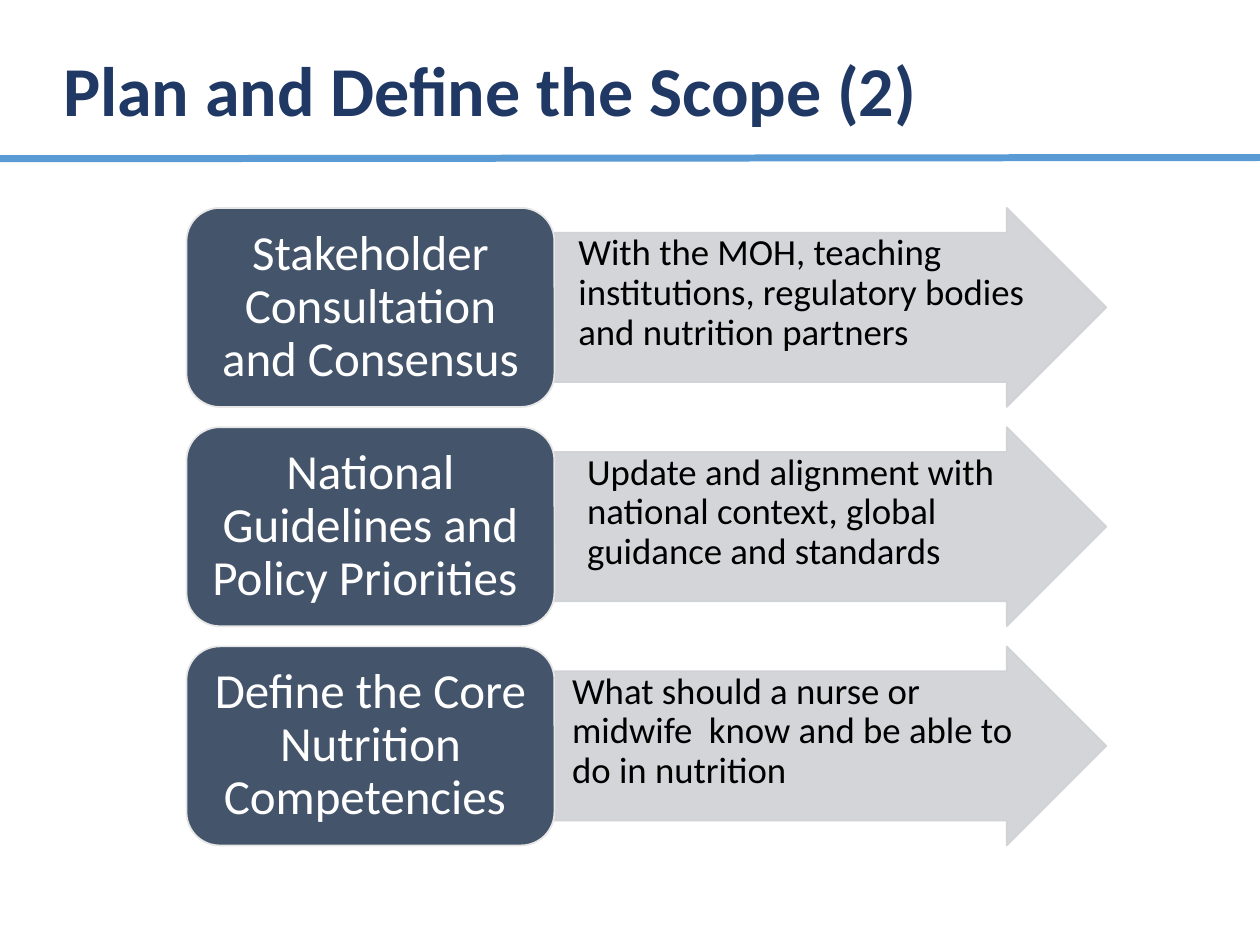
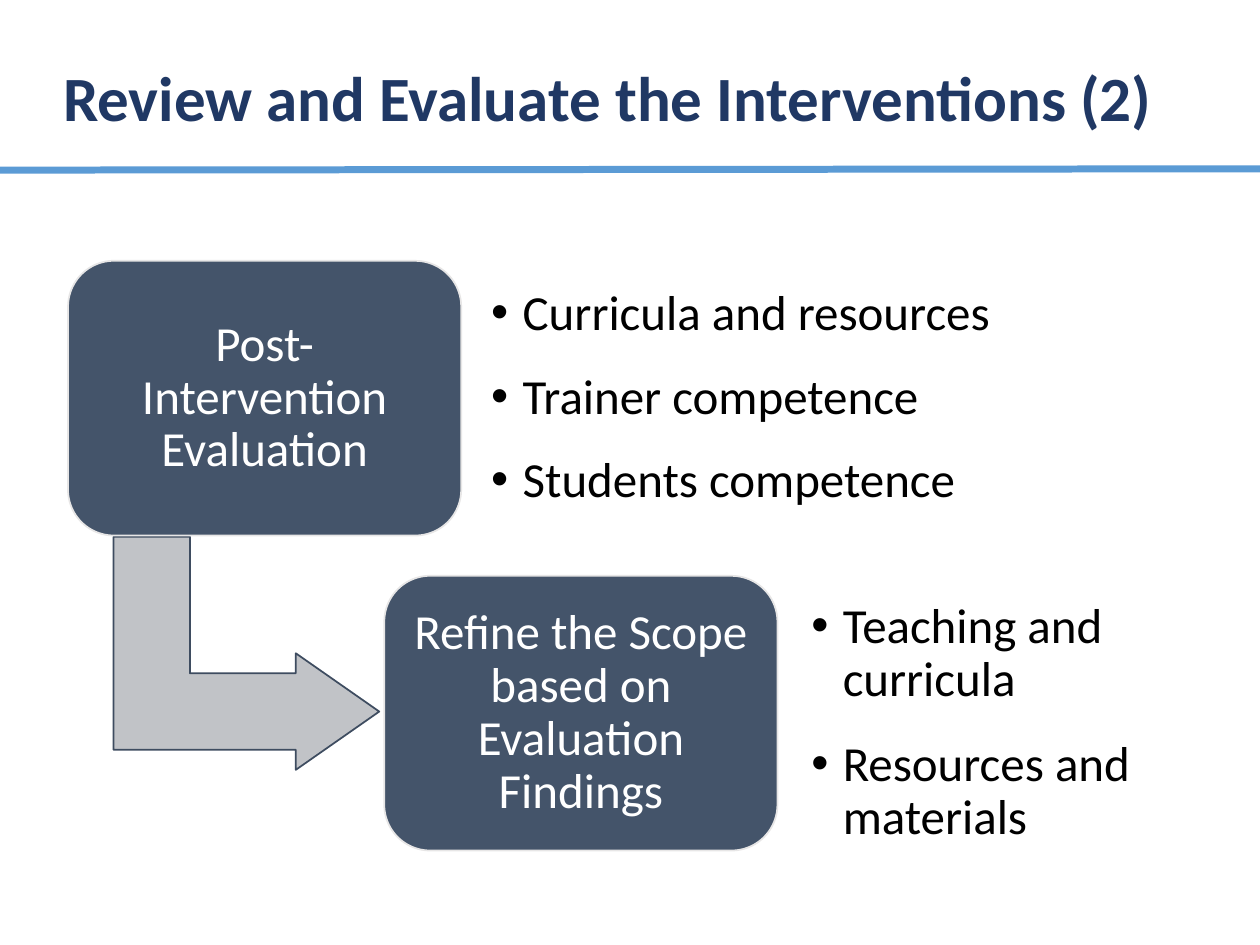
from lxml.etree import SubElement
from pptx import Presentation
from pptx.dml.color import RGBColor
from pptx.enum.shapes import MSO_CONNECTOR, MSO_SHAPE
from pptx.enum.text import MSO_ANCHOR, PP_ALIGN
from pptx.oxml.ns import qn
from pptx.util import Inches, Pt

COLORS = {"title": "203864", "rule": "5B9BD5", "box": "44546A", "box_line": "E7E6E6",
          "arrow": "CFD1D4", "bent": "C1C3C7", "bent_line": "3E4C60",
          "white": "FFFFFF", "black": "000000"}
FONT = "Calibri"


def format_text(tf, size, color, insets, anchor=MSO_ANCHOR.MIDDLE, align=PP_ALIGN.LEFT, bold=False):
    tf.word_wrap = True
    tf.vertical_anchor = anchor
    tf.margin_left, tf.margin_top, tf.margin_right, tf.margin_bottom = map(Inches, insets)
    for p in tf.paragraphs:
        p.alignment = align
        p.line_spacing = 0.9
        for r in p.runs:
            r.font.name = FONT
            r.font.size = Pt(size)
            r.font.bold = bold
            r.font.color.rgb = RGBColor.from_string(COLORS[color])


def add_filled(s, kind, at, fill, line, adjustments):
    sp = s.shapes.add_shape(kind, *map(Inches, at))
    sp.shadow.inherit = False
    for i, value in enumerate(adjustments):
        sp.adjustments[i] = value
    sp.fill.solid()
    sp.fill.fore_color.rgb = RGBColor.from_string(COLORS[fill])
    sp.line.color.rgb = RGBColor.from_string(COLORS[line])
    sp.line.width = Pt(1)
    return sp


prs = Presentation()
prs.slide_width, prs.slide_height = Inches(10), Inches(7.5)

# Titles and the rule below them
slides = []
for title, size, height, rule_y in [
    ("Plan and Define the Scope (2)", 40, 1.49, 1.26),
    ("Review and Evaluate the Interventions (2)", 36, 1.6, 1.35),
]:
    s = prs.slides.add_slide(prs.slide_layouts[5])
    sp = s.shapes.title
    sp.left, sp.top, sp.width, sp.height = map(Inches, (0, 0, 10, height))
    sp.text_frame.text = title
    format_text(sp.text_frame, size, "title", (0.5, 0.05, 0.5, 0.05), bold=True)
    rule = s.shapes.add_connector(MSO_CONNECTOR.STRAIGHT, 0, Inches(rule_y),
                                  Inches(10), Inches(rule_y - 0.01))
    rule.line.color.rgb = RGBColor.from_string(COLORS["rule"])
    rule.line.width = Pt(4)
    SubElement(rule._element.spPr, qn("a:effectLst"))
    slides.append(s)
scope, review = slides

# Scope: three boxes, each with an arrow that explains it
steps = [
    ("Stakeholder Consultation and Consensus",
     "With the MOH, teaching institutions, regulatory bodies and nutrition partners", 0.18),
    ("National Guidelines and Policy Priorities ",
     "Update and alignment with national context, global guidance and standards", 0.25),
    ("Define the Core Nutrition Competencies ",
     "What should a nurse or midwife  know and be able to do in nutrition", 0.13),
]
for i, (step, detail, indent) in enumerate(steps):
    top = 1.65 + 1.74 * i
    arrow = add_filled(scope, MSO_SHAPE.RIGHT_ARROW, (4.4, top, 4.38, 1.58),
                       "arrow", "arrow", (0.75, 0.5))
    for color in arrow._element.spPr.iter(qn("a:srgbClr")):
        SubElement(color, qn("a:alpha"), val="90000")
    arrow.text_frame.text = detail
    format_text(arrow.text_frame, 21, "black", (0.01 + indent, 0.01, 0.02, 0.01), MSO_ANCHOR.TOP)

    box = add_filled(scope, MSO_SHAPE.ROUNDED_RECTANGLE, (1.48, top, 2.92, 1.58),
                     "box", "box_line", (0.167,))
    box.text_frame.text = step
    format_text(box.text_frame, 28, "white", (0.11, 0.06, 0.11, 0.06), align=PP_ALIGN.CENTER)

# Review: bent arrow from the first stage to the second
bent = add_filled(review, MSO_SHAPE.BENT_UP_ARROW, (1.03, 4.13, 1.85, 2.11),
                  "bent", "bent_line", (0.328, 0.25, 0.358))
bent.rotation = 90

# Review: two stages, each with its bullet list
stages = [
    ("Post-Intervention Evaluation", 0.54, 2.07, (3.8, 2.28, 4.62, 1.76), 17.3,
     ["Curricula and resources", "Trainer competence", "Students competence"]),
    ("Refine the Scope based on Evaluation Findings", 3.05, 4.57, (6.34, 4.86, 3.22, 1.76), 18.4,
     ["Teaching and curricula", "Resources and materials"]),
]
for stage, left, top, list_at, gap, items in stages:
    box = add_filled(review, MSO_SHAPE.ROUNDED_RECTANGLE, (left, top, 3.12, 2.18),
                     "box", "box_line", (0.167,))
    box.text_frame.text = stage
    format_text(box.text_frame, 28, "white", (0.11,) * 4, align=PP_ALIGN.CENTER)

    tf = review.shapes.add_textbox(*map(Inches, list_at)).text_frame
    tf.text = "\n".join(items)
    format_text(tf, 28, "black", (0.1,) * 4)
    for i, p in enumerate(tf.paragraphs):
        p.space_before = Pt(gap if i else 0)
        pPr = p._p.get_or_add_pPr()
        pPr.set("marL", str(Inches(0.25)))
        pPr.set("indent", str(-Inches(0.25)))
        SubElement(pPr, qn("a:buFont"), typeface="Arial")
        SubElement(pPr, qn("a:buChar"), char="•")

prs.save("out.pptx")
